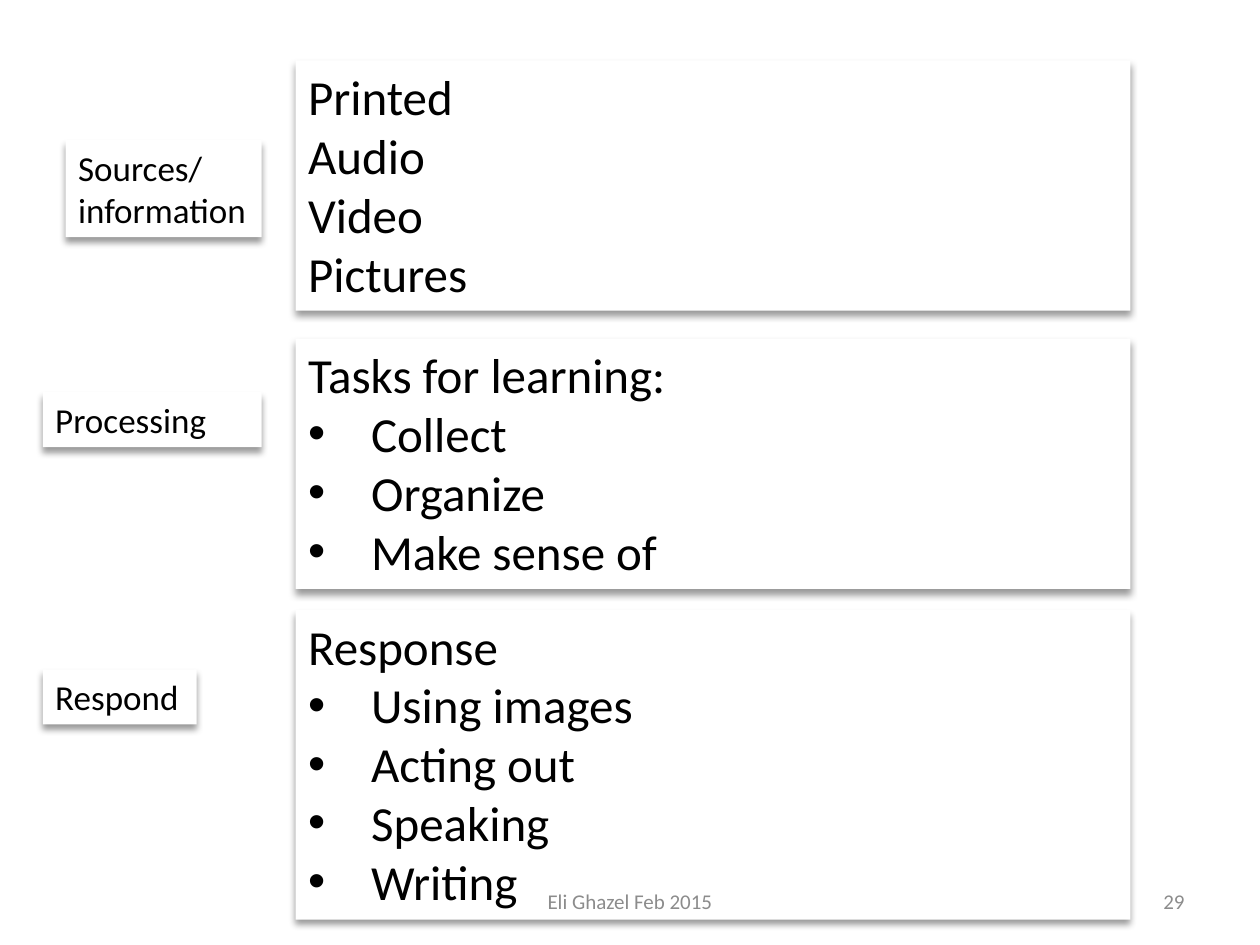
from pptx import Presentation
from pptx.dml.color import RGBColor
from pptx.enum.shapes import MSO_SHAPE as SHAPE
from pptx.enum.text import MSO_ANCHOR as ANCHOR, MSO_AUTO_SIZE as AUTO, PP_ALIGN as ALIGN
from pptx.oxml.ns import qn
from pptx.util import Pt
from lxml.etree import SubElement


def rgb(hex_color):
    return RGBColor.from_string(hex_color)


def write(p, text, size=28, color="000000", align=ALIGN.LEFT, bullet=False):
    """Put formatted text in a paragraph, with a hanging bullet if asked."""
    p.alignment = align
    r = p.add_run()
    r.text = text
    r.font.name = "Calibri"
    r.font.size = Pt(size)
    r.font.color.rgb = rgb(color)
    if bullet:
        pPr = p._p.get_or_add_pPr()
        pPr.set("marL", str(Pt(36)))
        pPr.set("indent", str(-Pt(36)))
        SubElement(pPr, qn("a:buFont"), typeface="Arial")
        SubElement(pPr, qn("a:buChar"), char="•")


class Deck:
    fill = "FFFFFF"
    muted = "8C8C8C"

    def __init__(self, width, height):
        self.prs = Presentation()
        self.prs.slide_width, self.prs.slide_height = Pt(width), Pt(height)
        self.s = self.prs.slides.add_slide(self.prs.slide_layouts[6])

    def add_shadow(self, sp):
        sp.shadow.inherit = False
        effects = sp._element.spPr.find(qn("a:effectLst"))
        shadow = SubElement(effects, qn("a:outerShdw"), blurRad=str(Pt(4)),
                            dist=str(Pt(3)), dir="5400000", rotWithShape="0")
        color = SubElement(shadow, qn("a:srgbClr"), val="000000")
        SubElement(color, qn("a:alpha"), val="40000")

    def card(self, x, y, w, h, lines, size=28, bullets=False):
        """White shadowed box; with bullets, the first line is the heading."""
        sp = self.s.shapes.add_shape(SHAPE.RECTANGLE, Pt(x), Pt(y), Pt(w), Pt(h))
        sp.fill.solid()
        sp.fill.fore_color.rgb = rgb(self.fill)
        sp.line.fill.background()
        self.add_shadow(sp)
        tf = sp.text_frame
        tf.word_wrap = True
        tf.auto_size = AUTO.SHAPE_TO_FIT_TEXT
        tf.vertical_anchor = ANCHOR.TOP
        for i, line in enumerate(lines):
            p = tf.add_paragraph() if i else tf.paragraphs[0]
            write(p, line, size, bullet=bullets and i > 0)

    def footer(self, x, w, text, align):
        sp = self.s.shapes.add_textbox(Pt(x), Pt(500.5), Pt(w), Pt(28.75))
        tf = sp.text_frame
        tf.word_wrap = True
        tf.vertical_anchor = ANCHOR.MIDDLE
        write(tf.paragraphs[0], text, 12, self.muted, align)


def main():
    deck = Deck(720, 540)

    # Content cards: top, height, lines, bulleted
    for y, h, lines, bullets in [
        (34.5, 143, ["Printed", "Audio", "Video", "Pictures"], False),
        (193.5, 143, ["Tasks for learning:", "Collect", "Organize", "Make sense of"], True),
        (348.5, 177, ["Response", "Using images", "Acting out", "Speaking", "Writing"], True),
    ]:
        deck.card(169, y, 477, h, lines, bullets=bullets)

    # Stage labels on the left
    for x, y, w, h, text in [
        (37.5, 80, 112, 55.5, "Sources/information"),
        (24.5, 224, 125, 31.5, "Processing"),
        (24.5, 382.5, 88, 31.5, "Respond"),
    ]:
        deck.card(x, y, w, h, [text], size=20)

    # Footer and slide number
    deck.footer(246, 228, "Eli Ghazel Feb 2015", ALIGN.CENTER)
    deck.footer(516, 168, "29", ALIGN.RIGHT)

    deck.prs.save("out.pptx")


if __name__ == "__main__":
    main()
